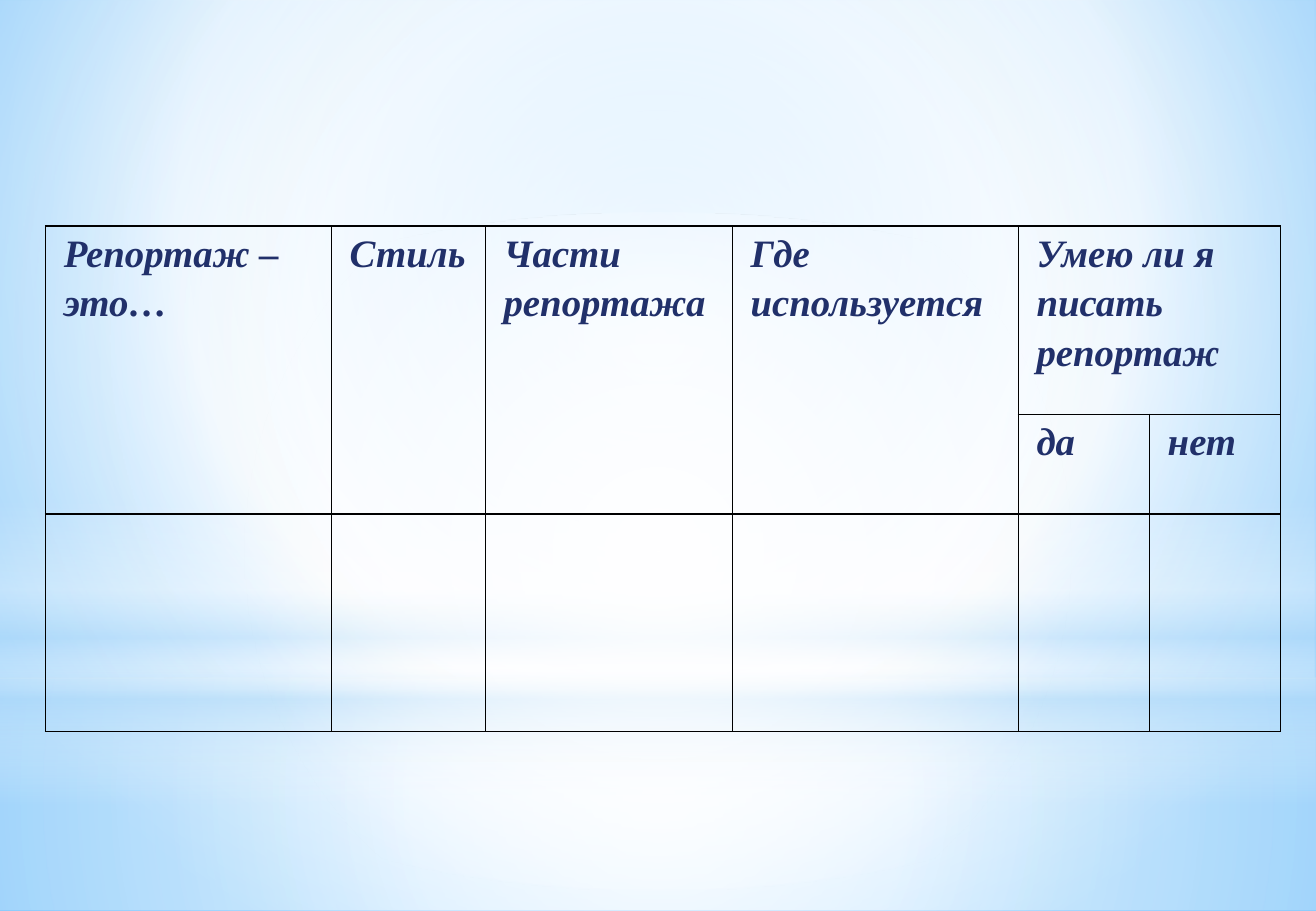
from typing import NamedTuple

from pptx import Presentation
from pptx.dml.color import RGBColor
from pptx.enum import shapes
from pptx.oxml import parse_xml
from pptx.oxml.ns import nsdecls
from pptx.util import Pt

WIDTH, HEIGHT = 780, 540
INK = "21306A"
BORDER = "000000"


class Stop(NamedTuple):
    position: int
    color: str
    opacity: int = 100


class Gradient(NamedTuple):
    stops: list[Stop]
    focus: tuple[int, int, int, int] | None = (50, 50, 50, 50)
    angle: int = 0


class Glow(NamedTuple):
    preset: shapes.MSO_SHAPE
    top: float
    height: float
    gradient: Gradient


class Heading(NamedTuple):
    row: int
    column: int
    words: str
    row_span: int = 1
    column_span: int = 1


SKY = Gradient([Stop(0, "9ED5FF"), Stop(60, "FFFFFF"), Stop(100, "5BB9FF")],
               (20, 10, 20, 60))
GLOWS = [
    Glow(shapes.MSO_SHAPE.RECTANGLE, 402, 138, Gradient(
        [Stop(0, "FFFFFF", 91), Stop(37, "FFFFFF", 76), Stop(100, "B4DCFA", 79)])),
    Glow(shapes.MSO_SHAPE.RECTANGLE, 0, 402, Gradient(
        [Stop(0, "FFFFFF", 89), Stop(48, "FFFFFF", 62), Stop(100, "B4DCFA", 79)])),
    Glow(shapes.MSO_SHAPE.RECTANGLE, 296.6, 180, Gradient(
        [Stop(0, "FFFFFF", 0), Stop(29, "FFFFFF", 30), Stop(45, "B4DCFA", 40),
         Stop(55, "FFFFFF", 26), Stop(65, "B4DCFA", 60), Stop(100, "FFFFFF", 0)],
        None, 90)),
    Glow(shapes.MSO_SHAPE.OVAL, 126, 402, Gradient(
        [Stop(0, "FFFFFF"), Stop(56, "FFFFFF", 0)])),
]

COLUMN_WIDTHS = [169.5, 91.2, 146.4, 169.5, 77.8, 77.8]
ROW_HEIGHTS = [111.6, 59, 128.9]
HEADINGS = [
    Heading(0, 0, "Репортаж – это…", row_span=2),
    Heading(0, 1, "Стиль", row_span=2),
    Heading(0, 2, "Части репортажа", row_span=2),
    Heading(0, 3, "Где используется", row_span=2),
    Heading(0, 4, "Умею ли я писать репортаж", column_span=2),
    Heading(1, 4, "да"),
    Heading(1, 5, "нет"),
]


def rgb(color: str) -> RGBColor:
    return RGBColor.from_string(color)


def paint(fill, holder, gradient: Gradient) -> None:
    """Give the fill found inside the holder element the gradient, with opacity."""
    fill.gradient()
    default = holder.xpath(".//a:gradFill")[0]
    stops = "".join(
        f'<a:gs pos="{stop.position * 1000}"><a:srgbClr val="{stop.color}">'
        f'<a:alpha val="{stop.opacity * 1000}"/></a:srgbClr></a:gs>'
        for stop in gradient.stops)
    if gradient.focus:
        left, top, right, bottom = (side * 1000 for side in gradient.focus)
        direction = (f'<a:path path="circle"><a:fillToRect l="{left}" t="{top}" '
                     f'r="{right}" b="{bottom}"/></a:path>')
    else:
        direction = f'<a:lin ang="{gradient.angle * 60000}" scaled="0"/>'
    default.getparent().replace(default, parse_xml(
        f'<a:gradFill {nsdecls("a")} rotWithShape="1"><a:gsLst>{stops}</a:gsLst>'
        f'{direction}</a:gradFill>'))


def add_glow(slide, glow: Glow) -> None:
    shape = slide.shapes.add_shape(
        glow.preset, 0, Pt(glow.top), Pt(WIDTH), Pt(glow.height))
    shape.shadow.inherit = False
    shape.line.fill.background()
    paint(shape.fill, shape.element.spPr, glow.gradient)


def format_cell(cell) -> None:
    cell.margin_left = cell.margin_right = Pt(10.8)
    cell.margin_top = cell.margin_bottom = 0
    properties = cell._tc.get_or_add_tcPr()
    for side in ("lnL", "lnR", "lnT", "lnB"):
        properties.append(parse_xml(
            f'<a:{side} {nsdecls("a")} w="{Pt(1)}"><a:solidFill>'
            f'<a:srgbClr val="{BORDER}"/></a:solidFill></a:{side}>'))
    cell.fill.background()


def write_heading(table, heading: Heading) -> None:
    cell = table.cell(heading.row, heading.column)
    if heading.row_span * heading.column_span > 1:
        cell.merge(table.cell(heading.row + heading.row_span - 1,
                              heading.column + heading.column_span - 1))
    paragraph = cell.text_frame.paragraphs[0]
    paragraph.text = heading.words
    paragraph.line_spacing = 1.15
    font = paragraph.runs[0].font
    font.name, font.size = "Times New Roman", Pt(23)
    font.bold = font.italic = True
    font.color.rgb = rgb(INK)


def add_report_table(slide) -> None:
    table = slide.shapes.add_table(
        len(ROW_HEIGHTS), len(COLUMN_WIDTHS), Pt(27), Pt(134),
        Pt(sum(COLUMN_WIDTHS)), Pt(sum(ROW_HEIGHTS))).table
    table.first_row = table.horz_banding = False
    for column, width in zip(table.columns, COLUMN_WIDTHS):
        column.width = Pt(width)
    for row, height in zip(table.rows, ROW_HEIGHTS):
        row.height = Pt(height)
    for cell in table.iter_cells():
        format_cell(cell)
    for heading in HEADINGS:
        write_heading(table, heading)


def main() -> None:
    deck = Presentation()
    deck.slide_width, deck.slide_height = Pt(WIDTH), Pt(HEIGHT)
    slide = deck.slides.add_slide(deck.slide_layouts[6])
    paint(slide.background.fill, slide.element, SKY)
    for glow in GLOWS:
        add_glow(slide, glow)
    add_report_table(slide)
    deck.save("out.pptx")


if __name__ == "__main__":
    main()
